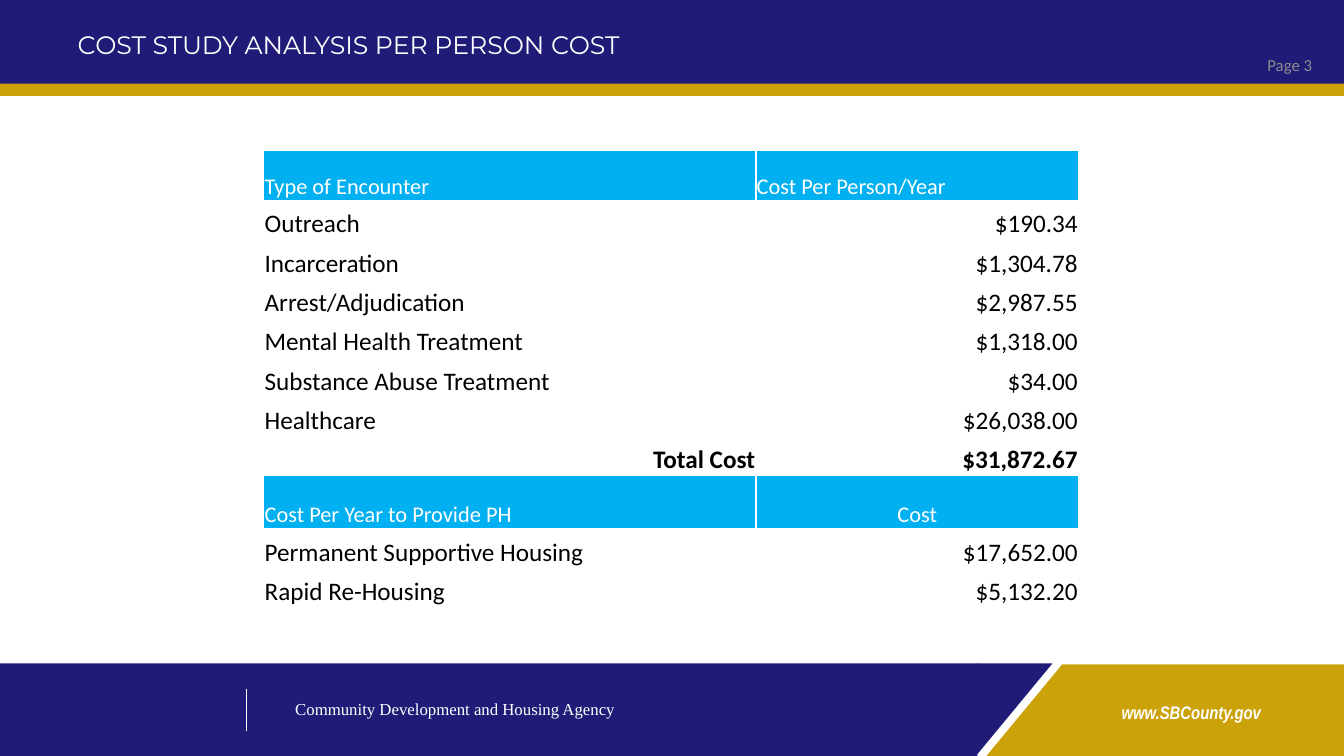
import pptx
import pptx.dml.color
import pptx.enum.shapes
import pptx.enum.text
import pptx.oxml
import pptx.oxml.ns
import pptx.util

Cm, Pt = pptx.util.Cm, pptx.util.Pt
RGBColor = pptx.dml.color.RGBColor
MSO_SHAPE = pptx.enum.shapes.MSO_SHAPE
ANCHOR = pptx.enum.text.MSO_ANCHOR
ALIGN = pptx.enum.text.PP_ALIGN

NAVY = RGBColor(0x1F, 0x1B, 0x77)
GOLD = RGBColor(0xCC, 0xA2, 0x0A)
SKY = RGBColor(0x00, 0xB0, 0xF0)
GREY = RGBColor(0x8C, 0x8C, 0x8C)
WHITE = RGBColor(0xFF, 0xFF, 0xFF)
BLACK = RGBColor(0, 0, 0)

ENCOUNTERS = [
    ("Outreach", "$190.34"),
    ("Incarceration", "$1,304.78"),
    ("Arrest/Adjudication", "$2,987.55"),
    ("Mental Health Treatment", "$1,318.00"),
    ("Substance Abuse Treatment", "$34.00"),
    ("Healthcare", "$26,038.00"),
]
HOUSING = [
    ("Permanent Supportive Housing", "$17,652.00"),
    ("Rapid Re-Housing", "$5,132.20"),
]


class SlideBuilder:
    """Draws styled elements on the current slide."""

    def __init__(self, prs):
        self.slide = prs.slides.add_slide(prs.slide_layouts[5])
        self.shapes = self.slide.shapes

    def font(self, p, size, color, name="Calibri", bold=False, italic=False):
        """Format a whole paragraph."""
        p.font.name, p.font.size = name, Pt(size)
        p.font.bold, p.font.italic = bold, italic
        p.font.color.rgb = color

    def block(self, kind, left, top, width, height, color, rotation=0):
        """Add a flat filled shape."""
        sp = self.shapes.add_shape(kind, Cm(left), Cm(top), Cm(width), Cm(height))
        sp.shadow.inherit = False
        sp.fill.solid()
        sp.fill.fore_color.rgb = color
        sp.line.fill.background()
        sp.rotation = rotation

    def rule(self, x, top, bottom):
        """Add a thin white vertical line."""
        line = self.shapes.add_connector(
            pptx.enum.shapes.MSO_CONNECTOR.STRAIGHT, Cm(x), Cm(top), Cm(x), Cm(bottom))
        line.line.color.rgb = WHITE
        line.line.width = Pt(0.25)
        line._element.spPr.append(pptx.oxml.parse_xml(
            f'<a:effectLst {pptx.oxml.ns.nsdecls("a")}/>'))

    def text(self, words, left, top, width, height, size, color,
             align=ALIGN.LEFT, anchor=ANCHOR.TOP, **style):
        """Add a one-paragraph text box."""
        box = self.shapes.add_textbox(Cm(left), Cm(top), Cm(width), Cm(height))
        tf = box.text_frame
        tf.word_wrap = True
        tf.vertical_anchor = anchor
        p = tf.paragraphs[0]
        p.text, p.alignment = words, align
        self.font(p, size, color, **style)

    def title(self, words, left, top, width, height):
        """Place the title in front of the bars."""
        sp = self.shapes.title
        sp.left, sp.top, sp.width, sp.height = Cm(left), Cm(top), Cm(width), Cm(height)
        tf = sp.text_frame
        tf.word_wrap = True
        tf.vertical_anchor = ANCHOR.MIDDLE
        p = tf.paragraphs[0]
        p.text, p.alignment, p.line_spacing = words, ALIGN.LEFT, 0.9
        self.font(p, 18, WHITE, name="Montserrat")
        self.shapes._spTree.append(sp._element)

    def cell(self, cell, words, align, size, color, bold=False, fill=None):
        """Fill and format one table cell with white borders."""
        cell.margin_left = cell.margin_right = cell.margin_top = Cm(0.02)
        cell.margin_bottom = 0
        cell.vertical_anchor = ANCHOR.BOTTOM
        p = cell.text_frame.paragraphs[0]
        p.text, p.alignment = words, align
        self.font(p, size, color, bold=bold)
        tcPr = cell._tc.get_or_add_tcPr()
        for side in ("lnL", "lnR", "lnT", "lnB"):
            tcPr.append(pptx.oxml.parse_xml(
                f'<a:{side} {pptx.oxml.ns.nsdecls("a")} w="{Pt(1)}"><a:solidFill>'
                f'<a:srgbClr val="{WHITE}"/></a:solidFill></a:{side}>'))
        if fill is None:
            cell.fill.background()
        else:
            cell.fill.solid()
            cell.fill.fore_color.rgb = fill

    def table(self, rows, left, top, widths):
        """Add a table from (height, labels, alignments, style) rows."""
        total = sum(height for height, *_ in rows)
        table = self.shapes.add_table(len(rows), len(widths), Cm(left), Cm(top),
                                      Cm(sum(widths)), Cm(total)).table
        table.first_row = table.horz_banding = False
        for column, width in zip(table.columns, widths):
            column.width = Cm(width)
        for i, (height, labels, aligns, style) in enumerate(rows):
            table.rows[i].height = Cm(height)
            for j, (words, align) in enumerate(zip(labels, aligns)):
                self.cell(table.cell(i, j), words, align, **style)


def cost_rows():
    """Return the rows of both cost sections."""
    head = dict(size=16, color=WHITE, fill=SKY)
    body = dict(size=18, color=BLACK)
    sides = (ALIGN.LEFT, ALIGN.RIGHT)
    return [
        (1.27, ("Type of Encounter", "Cost Per Person/Year"), (ALIGN.LEFT,) * 2, head),
        *[(0.99, row, sides, body) for row in ENCOUNTERS],
        (0.99, ("Total Cost", "$31,872.67"), (ALIGN.RIGHT,) * 2, dict(body, bold=True)),
        (1.34, ("Cost Per Year to Provide PH", "Cost"), (ALIGN.LEFT, ALIGN.CENTER), head),
        *[(0.99, row, sides, body) for row in HOUSING],
    ]


def main():
    """Build the cost study slide."""
    prs = pptx.Presentation()
    prs.slide_width, prs.slide_height = Cm(33.87), Cm(19.05)
    s = SlideBuilder(prs)

    s.block(MSO_SHAPE.RECTANGLE, 0, 2.01, 33.91, 0.41, GOLD)
    s.block(MSO_SHAPE.RECTANGLE, 0, 0, 33.91, 2.11, NAVY)
    s.block(MSO_SHAPE.RECTANGLE, 26.77, 16.74, 7.1, 2.31, GOLD)
    s.block(MSO_SHAPE.RIGHT_TRIANGLE, 24.66, 16.94, 2.31, 1.91, GOLD, 270)
    s.block(MSO_SHAPE.RECTANGLE, -0.03, 16.72, 24.66, 2.33, NAVY)
    s.block(MSO_SHAPE.RIGHT_TRIANGLE, 24.41, 16.92, 2.31, 1.91, NAVY, 90)
    s.rule(6.2, 17.35, 18.42)

    s.text("www.SBCounty.gov", 26.21, 17.55, 7.62, 0.81, 13, WHITE, ALIGN.CENTER,
           name="Arial Narrow", bold=True, italic=True)
    s.text("Page 3", 29.36, 1.12, 3.96, 1.02, 12, GREY, ALIGN.RIGHT, ANCHOR.MIDDLE)
    s.text("Community Development and Housing Agency", 7.19, 17.48, 13.41, 1.14, 12,
           WHITE, name="Times New Roman")
    s.title("COST STUDY ANALYSIS PER PERSON COST", 1.7, -0.43, 30.48, 3.18)
    s.table(cost_rows(), 6.65, 3.78, (12.4, 8.13))
    prs.save("out.pptx")


if __name__ == "__main__":
    main()
